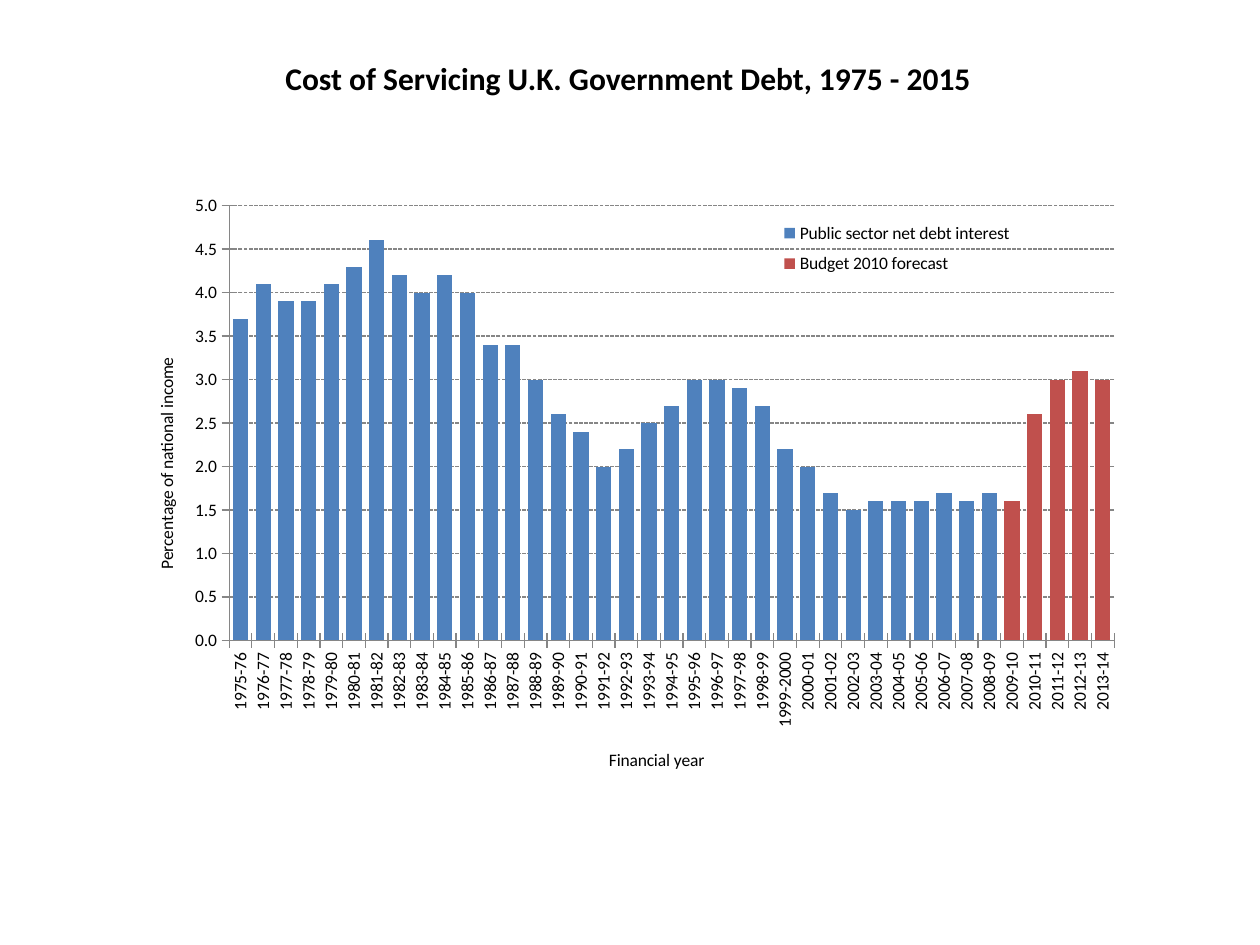
import pptx
import pptx.chart.data
import pptx.dml.color
import pptx.enum.chart
import pptx.enum.dml
import pptx.enum.text
import pptx.oxml
import pptx.oxml.ns
import pptx.util

Pt = pptx.util.Pt
RGBColor = pptx.dml.color.RGBColor
qn = pptx.oxml.ns.qn

BLACK = RGBColor(0x00, 0x00, 0x00)
GREY = RGBColor(0x86, 0x86, 0x86)
BLUE = RGBColor(0x4F, 0x81, 0xBD)
RED = RGBColor(0xC0, 0x50, 0x4D)

YEARS = [
    "1999-2000" if year == 1999 else f"{year}-{(year + 1) % 100:02d}"
    for year in range(1975, 2014)
]
INTEREST = [
    3.7, 4.1, 3.9, 3.9, 4.1, 4.3, 4.6, 4.2, 4.0, 4.2, 4.0, 3.4,
    3.4, 3.0, 2.6, 2.4, 2.0, 2.2, 2.5, 2.7, 3.0, 3.0, 2.9, 2.7,
    2.2, 2.0, 1.7, 1.5, 1.6, 1.6, 1.6, 1.7, 1.6, 1.7,
]
FORECAST = [1.6, 2.6, 3.0, 3.1, 3.0]
SERIES = [
    ("Budget 2010 forecast", [None] * len(INTEREST) + FORECAST, RED),
    ("Public sector net debt interest", INTEREST + [None] * len(FORECAST), BLUE),
]


def write_text(frame, text, font="Calibri", size=10, bold=False, color=BLACK):
    para = frame.paragraphs[0]
    span = para.add_run()
    span.text = text
    span.font.name = font
    span.font.size = Pt(size)
    span.font.bold = bold
    span.font.color.rgb = color


def place(parent, index, inner=False, **fractions):
    for old in parent.findall(qn("c:layout")):
        parent.remove(old)
    layout = pptx.oxml.parse_xml(
        '<c:layout xmlns:c="http://schemas.openxmlformats.org/drawingml/2006/chart">'
        "<c:manualLayout/></c:layout>"
    )
    settings = [("layoutTarget", "inner")] if inner else []
    settings += [(f"{key}Mode", "edge") for key in "xy"]
    settings += fractions.items()
    for name, value in settings:
        item = layout[0].makeelement(qn(f"c:{name}"), {"val": str(value)})
        layout[0].append(item)
    parent.insert(index, layout)


class SlideBuilder:
    def __init__(self, page, font="Calibri", line_width=0.75):
        self.page = page
        self.font = font
        self.line_width = line_width

    def title(self, text, left, top, width, height):
        box = self.page.shapes.add_textbox(Pt(left), Pt(top), Pt(width), Pt(height))
        box.text_frame.word_wrap = True
        box.text_frame.auto_size = pptx.enum.text.MSO_AUTO_SIZE.SHAPE_TO_FIT_TEXT
        write_text(box.text_frame, text, font=self.font, size=18, bold=True)

    def line(self, line):
        line.color.rgb = GREY
        line.width = Pt(self.line_width)

    def axis(self, axis, title, x, y):
        write_text(axis.axis_title.text_frame, title, font=self.font)
        place(axis.axis_title._element, 1, x=x, y=y)
        axis.major_tick_mark = pptx.enum.chart.XL_TICK_MARK.CROSS
        axis.minor_tick_mark = pptx.enum.chart.XL_TICK_MARK.NONE
        axis.tick_labels.font.size = Pt(10)
        self.line(axis.format.line)

    def stacked_columns(self, left, top, width, height):
        data = pptx.chart.data.CategoryChartData(number_format="0.0")
        data.categories = YEARS
        for name, values, color in SERIES:
            data.add_series(name, values)
        chart = self.page.shapes.add_chart(
            pptx.enum.chart.XL_CHART_TYPE.COLUMN_STACKED,
            Pt(left), Pt(top), Pt(width), Pt(height), data,
        ).chart
        chart.has_title = False
        chart.font.name = self.font
        chart.font.size = Pt(10)
        chart.font.color.rgb = BLACK

        plot = chart.plots[0]
        plot.gap_width = 49
        plot.overlap = 100
        plot.vary_by_categories = False
        for series, (name, values, color) in zip(plot.series, SERIES):
            series.format.fill.solid()
            series.format.fill.fore_color.rgb = color
        place(chart._chartSpace.chart.plotArea, 0, inner=True,
              x=0.112, y=0.044, w=0.872, h=0.702)

        years = chart.category_axis
        self.axis(years, "Financial year", 0.483, 0.915)
        label_body = years._element.find(qn("c:txPr")).find(qn("a:bodyPr"))
        label_body.set("rot", "-5400000")
        label_body.set("vert", "horz")

        share = chart.value_axis
        self.axis(share, "Percentage of national income", 0.036, 0.284)
        title_body = share.axis_title.text_frame._txBody.find(qn("a:bodyPr"))
        title_body.set("rot", "-5400000")
        title_body.set("vert", "horz")
        share.minimum_scale, share.maximum_scale, share.major_unit = 0, 5, 0.5
        share.tick_labels.number_format = "#,##0.0"
        share.tick_labels.number_format_is_linked = False
        share.has_major_gridlines = True
        grid = share.major_gridlines.format.line
        self.line(grid)
        grid.dash_style = pptx.enum.dml.MSO_LINE.SQUARE_DOT

        chart.has_legend = True
        chart.legend.position = pptx.enum.chart.XL_LEGEND_POSITION.RIGHT
        chart.legend.include_in_layout = True
        chart.legend.font.size = Pt(10)
        place(chart.legend._element, 1, x=0.62, y=0.055, w=0.3, h=0.116)


def main():
    deck = pptx.Presentation()
    deck.slide_width, deck.slide_height = Pt(720), Pt(540)
    builder = SlideBuilder(deck.slides.add_slide(deck.slide_layouts[6]))
    builder.stacked_columns(66, 102, 580, 354)
    builder.title("Cost of Servicing U.K. Government Debt, 1975 - 2015", 156, 30, 408, 29)
    deck.save("out.pptx")


if __name__ == "__main__":
    main()
